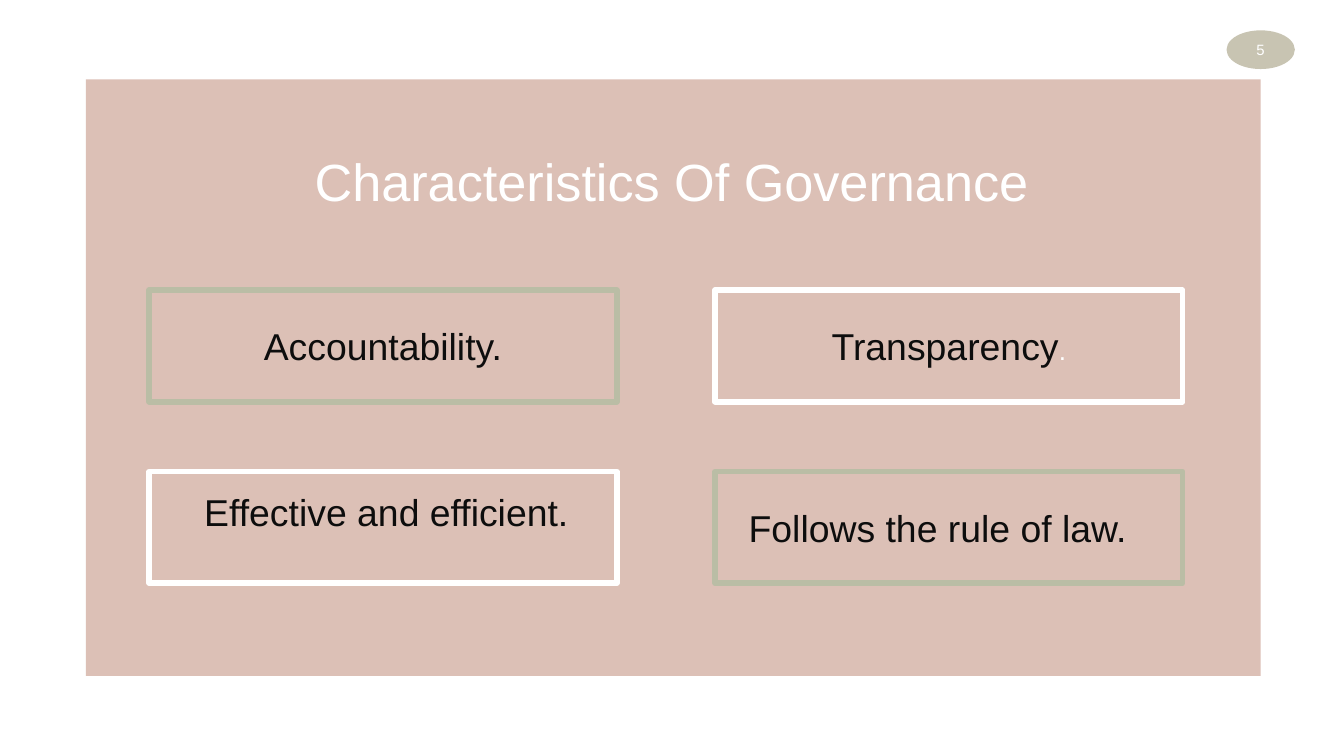
import pptx
import pptx.util
from pptx.dml.color import RGBColor
from pptx.enum.shapes import MSO_SHAPE
from pptx.enum.text import MSO_ANCHOR, PP_ALIGN
from pptx.util import Inches

COLORS = {"rose": "DCC0B6", "sage": "BABDA5", "sand": "C8C4B2",
          "white": "FFFFFF", "ink": "0D0D0D"}
FONT = "Arial"
CARD_LEFTS = (1.11, 5.32)
CARD_TOPS = (2.16, 3.51)
CARD_SIZE = (3.48, 0.83)


def rgb(name):
    return RGBColor.from_string(COLORS[name])


def add_shape(s, kind, box, fill, line=None, width=0):
    sp = s.shapes.add_shape(kind, *map(Inches, box))
    sp.shadow.inherit = False
    sp.fill.solid()
    sp.fill.fore_color.rgb = rgb(fill)
    if line:
        sp.line.color.rgb = rgb(line)
        sp.line.width = pptx.util.Pt(width)
    else:
        sp.line.fill.background()
    return sp


def set_text(sp, runs, align=PP_ALIGN.CENTER, anchor=MSO_ANCHOR.MIDDLE):
    """Fill a shape with one paragraph of (text, size, color) runs."""
    tf = sp.text_frame
    tf.word_wrap = True
    tf.vertical_anchor = anchor
    p = tf.paragraphs[0]
    p.alignment = align
    for text, size, color in runs:
        r = p.add_run()
        r.text = text
        r.font.name = FONT
        r.font.size = pptx.util.Pt(size)
        r.font.color.rgb = rgb(color)
    return tf


def add_title(s, text):
    sp = s.shapes.add_textbox(*map(Inches, (1.27, 0.93, 7.45, 0.75)))
    tf = set_text(sp, [(text, 28, "white")], anchor=MSO_ANCHOR.BOTTOM)
    tf.margin_left = tf.margin_right = Inches(0.1)
    tf.margin_top = tf.margin_bottom = Inches(0.1)


def add_card(s, col, row, runs, align=PP_ALIGN.CENTER):
    """Add a framed card; frame colors alternate like a checkerboard."""
    line = "white" if (col + row) % 2 else "sage"
    box = (CARD_LEFTS[col], CARD_TOPS[row], *CARD_SIZE)
    sp = add_shape(s, MSO_SHAPE.RECTANGLE, box, "rose", line, 3)
    return set_text(sp, runs, align)


def add_page_number(s, number):
    sp = add_shape(s, MSO_SHAPE.OVAL, (9.14, 0.24, 0.48, 0.26), "sand", "sand", 2)
    tf = set_text(sp, [(number, 8, "white")])
    tf.margin_left = tf.margin_right = tf.margin_top = tf.margin_bottom = 0


def main():
    prs = pptx.Presentation()
    prs.slide_width = Inches(10)
    prs.slide_height = prs.slide_width * 9 // 16
    s = prs.slides.add_slide(prs.slide_layouts[6])

    add_shape(s, MSO_SHAPE.RECTANGLE, (0.64, 0.59, 8.74, 4.44), "rose")
    add_title(s, "Characteristics Of Governance")

    add_card(s, 0, 0, [("Accountability.", 20, "ink")])
    effective = add_card(s, 0, 1, [("Effective and efficient.", 20, "ink")])
    effective.margin_left = Inches(0.15)
    effective.margin_bottom = Inches(0.28)
    add_card(s, 1, 0, [("Transparency", 20, "ink"), (".", 14, "white")])
    law = add_card(s, 1, 1, [("Follows the rule of law.", 20, "ink")], PP_ALIGN.LEFT)
    law.margin_left = Inches(0.25)

    add_page_number(s, "5")
    prs.save("out.pptx")


if __name__ == "__main__":
    main()
